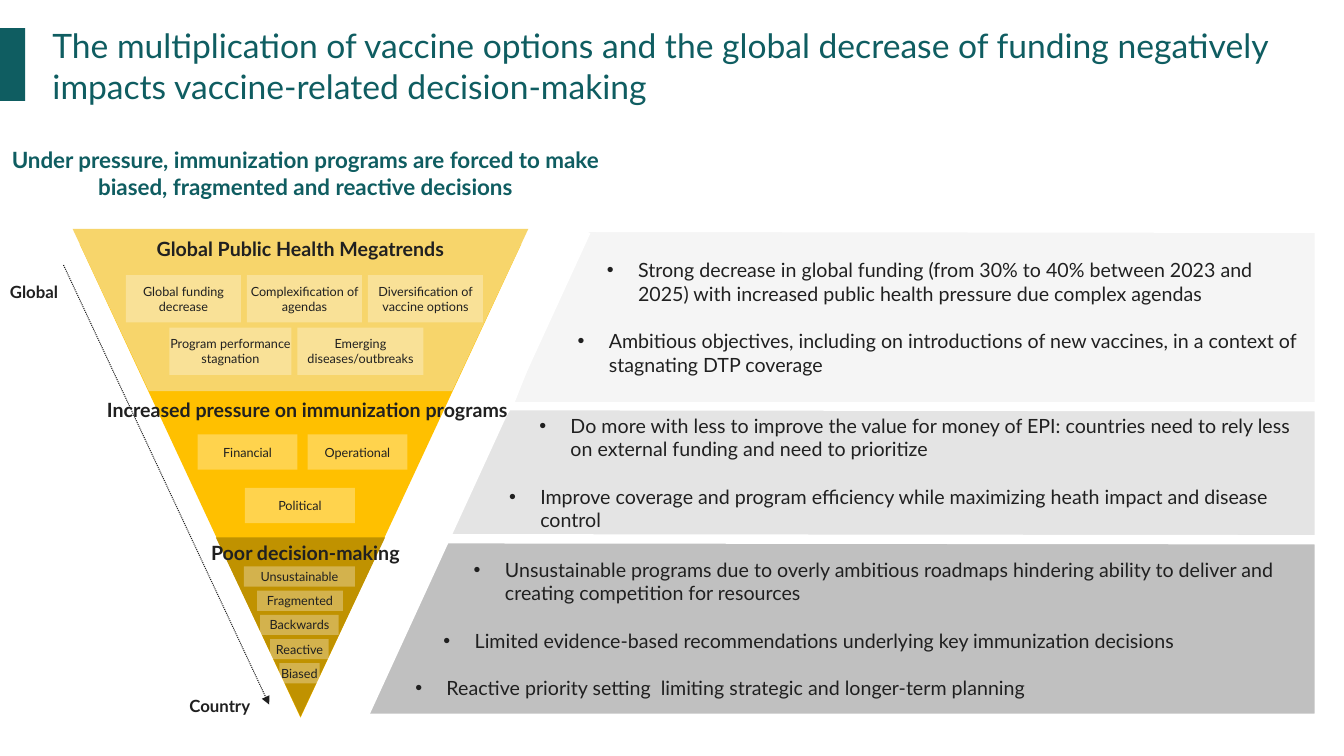
import pptx
import pptx.util
import pptx.dml.color
import pptx.enum.dml
import pptx.enum.shapes
import pptx.enum.text
import pptx.oxml.ns
import lxml.etree

SHAPE = pptx.enum.shapes.MSO_SHAPE
ANCHOR = pptx.enum.text.MSO_ANCHOR
ALIGN = pptx.enum.text.PP_ALIGN
qn = pptx.oxml.ns.qn
COLORS = {
    "teal": "0F5D61", "ink": "202020", "white": "FFFFFF",
    "light": "F2F2F2", "mid": "D9D9D9", "dark": "A6A6A6",
    "pale": "F7D56B", "gold": "FFC000", "brown": "C09200",
}


def px(count):
    return pptx.util.Emu(count * 9144)


def rgb(name):
    return pptx.dml.color.RGBColor.from_string(COLORS[name])


def child(parent, tag, **attrs):
    return lxml.etree.SubElement(parent, qn(tag), **attrs)


class Deck:
    font = "Lato"

    def __init__(self):
        self.show = pptx.Presentation()
        self.show.slide_width, self.show.slide_height = px(1333), px(750)
        self.slide = self.show.slides.add_slide(self.show.slide_layouts[5])
        self.shapes = self.slide.shapes

    def style(self, frame, size, color="ink", bold=False, align=ALIGN.LEFT):
        for para in frame.paragraphs:
            para.alignment = align
            for run in para.runs:
                run.font.name = self.font
                run.font.size = pptx.util.Pt(size)
                run.font.bold = bold
                run.font.color.rgb = rgb(color)

    def inset(self, frame, side, top):
        frame.margin_left = frame.margin_right = px(side)
        frame.margin_top = frame.margin_bottom = px(top)

    def paint(self, shape, color, alpha=100):
        shape.shadow.inherit = False
        shape.fill.solid()
        shape.fill.fore_color.rgb = rgb(color)
        shape.line.fill.background()
        if alpha < 100:
            tint = shape.element.spPr.find(qn("a:solidFill"))[0]
            child(tint, "a:alpha", val=str(alpha * 1000))

    def title(self, text, *box):
        shape = self.shapes.title
        shape.left, shape.top, shape.width, shape.height = map(px, box)
        frame = shape.text_frame
        frame.text = text
        frame.word_wrap = True
        frame.auto_size = pptx.enum.text.MSO_AUTO_SIZE.NONE
        frame.vertical_anchor = ANCHOR.TOP
        self.inset(frame, 0, 0)
        self.style(frame, 24, "teal")

    def text(self, text, *box, size=14, color="ink", align=ALIGN.CENTER,
             anchor=ANCHOR.TOP, inset=(10, 5)):
        frame = self.shapes.add_textbox(*map(px, box)).text_frame
        frame.text = text
        frame.word_wrap = True
        frame.vertical_anchor = anchor
        self.inset(frame, *inset)
        self.style(frame, size, color, True, align)

    def block(self, kind, color, *box, alpha=100, turn=0):
        shape = self.shapes.add_shape(kind, *map(px, box))
        self.paint(shape, color, alpha)
        shape.rotation = turn
        return shape

    def row(self, left, top, high, gap, *tags):
        for text, wide in tags:
            shape = self.block(SHAPE.RECTANGLE, "white", left, top, wide, high,
                               alpha=30)
            frame = shape.text_frame
            frame.text = text
            frame.word_wrap = True
            frame.vertical_anchor = ANCHOR.MIDDLE
            self.inset(frame, 0, 5)
            self.style(frame, 9, align=ALIGN.CENTER)
            left += wide + gap

    def panel(self, color, points, items):
        form = self.shapes.build_freeform(*points[0], scale=9144)
        form.add_line_segments(points[1:], close=True)
        shape = form.convert_to_shape()
        self.paint(shape, color, 70)
        shape.line.color.rgb = rgb("white")
        shape.line.width = pptx.util.Pt(4.5)
        frame = shape.text_frame
        frame.text = "\n".join(text for text, indent in items)
        frame.word_wrap = True
        frame.vertical_anchor = ANCHOR.MIDDLE
        self.inset(frame, 10, 5)
        for num, (para, item) in enumerate(zip(frame.paragraphs, items)):
            props = para._p.get_or_add_pPr()
            props.set("marL", str(px(item[1])))
            props.set("indent", str(px(-31)))
            child(props, "a:buFont", typeface="Arial")
            child(props, "a:buChar", char="•")
            if num:
                para.space_before = pptx.util.Pt(17)
        self.style(frame, 14)

    def line(self, ends, color, width, arrow=False):
        kind = pptx.enum.shapes.MSO_CONNECTOR.STRAIGHT
        edge = self.shapes.add_connector(kind, *map(px, ends))
        edge.line.color.rgb = rgb(color)
        edge.line.width = pptx.util.Pt(width)
        if arrow:
            edge.line.dash_style = pptx.enum.dml.MSO_LINE.ROUND_DOT
            child(edge.line._get_or_add_ln(), "a:tailEnd", type="triangle")
        child(edge.element.spPr, "a:effectLst")


def main():
    deck = Deck()
    deck.panel("light", [(506, 402), (576, 227), (1307, 228), (1307, 402)], [
        ("Strong decrease in global funding (from 30% to 40% between 2023 and 2025) with increased public health pressure due complex agendas", 117),
        ("Ambitious objectives, including on introductions of new vaccines, in a context of stagnating DTP coverage", 88),
    ])
    deck.panel("mid", [(428, 533), (504, 404), (1307, 405), (1307, 534)], [
        ("Do more with less to improve the value for money of EPI: countries need to rely less on external funding and need to prioritize", 128),
        ("Improve coverage and program efficiency while maximizing heath impact and disease control", 98),
    ])
    deck.panel("dark", [(354, 711), (437, 536), (1307, 537), (1307, 711)], [
        ("Unsustainable programs due to overly ambitious roadmaps hindering ability to deliver and creating competition for resources", 137),
        ("Limited evidence-based recommendations underlying key immunization decisions", 107),
        ("Reactive priority setting  limiting strategic and longer-term planning", 79),
    ])

    deck.block(SHAPE.RECTANGLE, "teal", 0, 28, 25, 72)
    deck.title("The multiplication of vaccine options and the global decrease of funding negatively impacts vaccine-related decision-making",
               52, 25, 1273, 80)
    deck.text("Under pressure, immunization programs are forced to make biased, fragmented and reactive decisions",
              10, 145, 586, 54, size=16, color="teal", inset=(0, 0))

    deck.block(SHAPE.ISOSCELES_TRIANGLE, "gold", 79, 242, 438, 470, turn=180)
    deck.block(SHAPE.ISOSCELES_TRIANGLE, "brown", 214, 533, 168, 178, turn=180)
    top = deck.block(SHAPE.TRAPEZOID, "pale", 72, 227, 452, 161, turn=180)
    top.adjustments[0] = 0.47

    deck.text("Global Public Health Megatrends", 124, 230, 348, 36)
    deck.text("Poor decision-making", 198, 501, 210, 94, anchor=ANCHOR.MIDDLE)
    deck.row(125, 273, 47, 6, ("Global funding decrease", 114),
             ("Complexification of agendas", 114),
             ("Diversification of vaccine options", 114))
    deck.row(168, 325, 47, 6, ("Program performance stagnation", 121),
             ("Emerging diseases/outbreaks", 125))
    deck.row(196, 431, 35, 10, ("Financial", 99), ("Operational", 99))
    deck.row(243, 484, 35, 0, ("Political", 109))
    flaws = [("Unsustainable", 110), ("Fragmented", 85), ("Backwards", 78),
             ("Reactive", 58), ("Biased", 40)]
    for num, (text, wide) in enumerate(flaws):
        deck.row(297 - wide // 2, 562 + 24 * num, 20, 0, (text, wide))

    deck.line((63, 263, 267, 699), "ink", 0.75, arrow=True)
    deck.line((576, 227, 354, 711), "white", 15.25)
    deck.text("Increased pressure on immunization programs", 95, 390, 420, 32)
    for text, left, high in (("Global", 0, 273), ("Country", 178, 684)):
        deck.text(text, left, high, 85, 32, size=12, align=ALIGN.LEFT,
                  anchor=ANCHOR.MIDDLE)
    deck.show.save("out.pptx")


if __name__ == "__main__":
    main()
